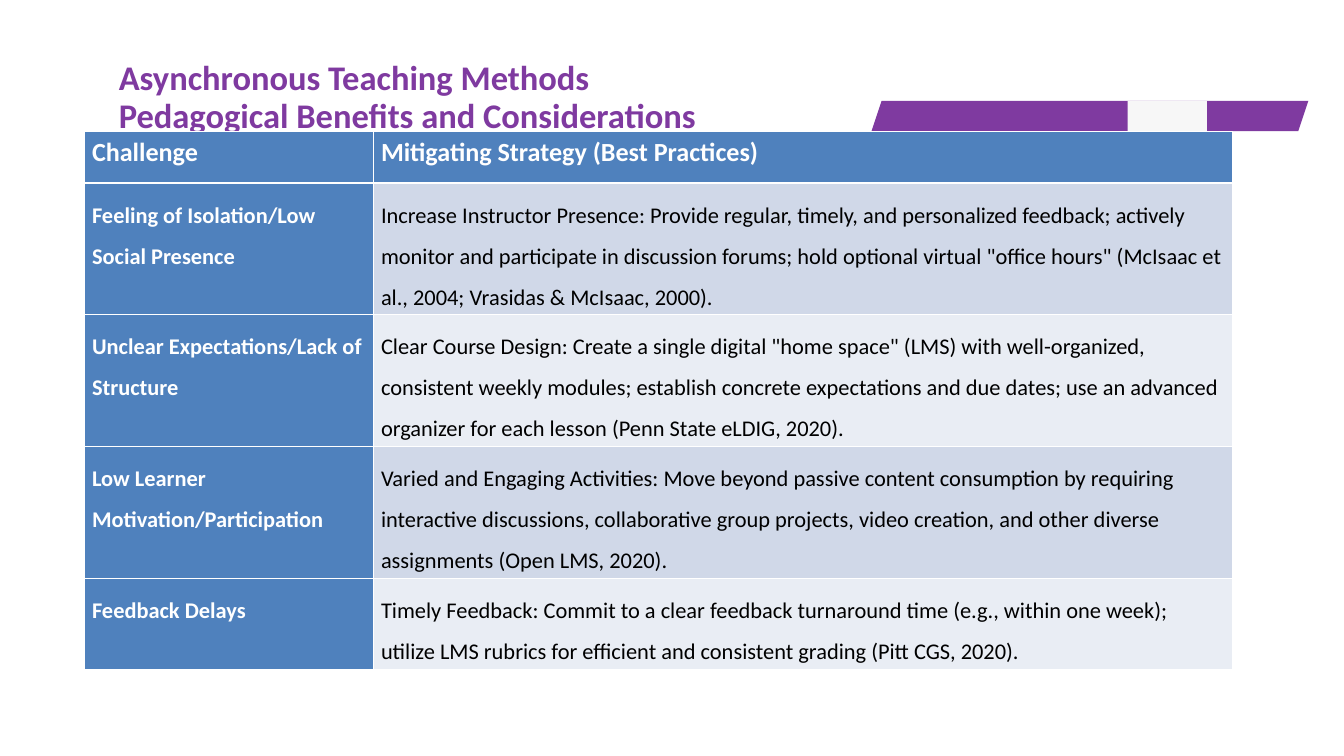
from dataclasses import dataclass

from lxml.etree import SubElement
from pptx import Presentation
from pptx.dml.color import RGBColor
from pptx.enum.shapes import MSO_SHAPE
from pptx.enum.text import MSO_ANCHOR
from pptx.oxml.ns import qn
from pptx.util import Inches, Pt


@dataclass(frozen=True)
class Theme:
    font: str = "Calibri"
    purple: str = "7F3AA0"
    pale: str = "F7F7F7"
    blue: str = "4F81BD"
    bands: tuple = ("D0D8E8", "E9EDF4")
    white: str = "FFFFFF"
    black: str = "000000"
    title_size: float = 37
    header_size: float = 28
    body_size: float = 24
    thin_border: float = 1
    thick_border: float = 3


COLUMNS, ROWS = 20, 11.25

HEADER = ("Challenge", "Mitigating Strategy (Best Practices)")
STRATEGIES = [
    ("Feeling of Isolation/Low Social Presence",
     "Increase Instructor Presence: Provide regular, timely, and personalized feedback; "
     "actively monitor and participate in discussion forums; hold optional virtual "
     "\"office hours\" (McIsaac et al., 2004; Vrasidas & McIsaac, 2000)."),
    ("Unclear Expectations/Lack of Structure",
     "Clear Course Design: Create a single digital \"home space\" (LMS) with "
     "well-organized, consistent weekly modules; establish concrete expectations and due "
     "dates; use an advanced organizer for each lesson (Penn State eLDIG, 2020)."),
    ("Low Learner Motivation/Participation",
     "Varied and Engaging Activities: Move beyond passive content consumption by "
     "requiring interactive discussions, collaborative group projects, video creation, "
     "and other diverse assignments (Open LMS, 2020)."),
    ("Feedback Delays",
     "Timely Feedback: Commit to a clear feedback turnaround time (e.g., within one "
     "week); utilize LMS rubrics for efficient and consistent grading (Pitt CGS, 2020)."),
]


class SlideBuilder:
    def __init__(self, presentation, theme):
        self.theme = theme
        self.column = presentation.slide_width / COLUMNS
        self.row = presentation.slide_height / ROWS
        self.slide = presentation.slides.add_slide(presentation.slide_layouts[6])

    def across(self, columns):
        return round(columns * self.column)

    def down(self, rows):
        return round(rows * self.row)

    def place(self, left, top, width, height):
        return self.across(left), self.down(top), self.across(width), self.down(height)

    def paint(self, shape, color):
        shape.shadow.inherit = False
        shape.fill.solid()
        shape.fill.fore_color.rgb = RGBColor.from_string(color)
        shape.line.fill.background()

    def rectangle(self, left, top, width, height, color):
        shape = self.slide.shapes.add_shape(
            MSO_SHAPE.RECTANGLE, *self.place(left, top, width, height))
        self.paint(shape, color)

    def slanted_bar(self, left, top, width, height, slant, color):
        corners = [(left + slant, top), (left + width, top),
                   (left + width - slant, top + height), (left, top + height)]
        points = [(self.across(x), self.down(y)) for x, y in corners]
        outline = self.slide.shapes.build_freeform(*points[0])
        outline.add_line_segments(points[1:], close=True)
        self.paint(outline.convert_to_shape(), color)

    def add_run(self, paragraph, text, size, color, bold):
        run = paragraph.add_run()
        run.text = text
        run.font.name = self.theme.font
        run.font.size = Pt(size)
        run.font.bold = bold
        run.font.color.rgb = RGBColor.from_string(color)

    def title(self, left, top, width, height, lines):
        box = self.slide.shapes.add_textbox(*self.place(left, top, width, height))
        frame = box.text_frame
        frame.word_wrap = True
        frame.vertical_anchor = MSO_ANCHOR.TOP
        frame.margin_top = frame.margin_bottom = Inches(0.08)
        paragraph = frame.paragraphs[0]
        paragraph.line_spacing = 0.9
        for index, line in enumerate(lines):
            if index:
                paragraph.add_line_break()
            self.add_run(paragraph, line, self.theme.title_size, self.theme.purple, True)

    def borders(self, cell, top, bottom):
        properties = cell._tc.get_or_add_tcPr()
        thin = self.theme.thin_border
        for side, width in (("L", thin), ("R", thin), ("T", top), ("B", bottom)):
            line = SubElement(properties, qn(f"a:ln{side}"), w=str(Pt(width)))
            fill = SubElement(line, qn("a:solidFill"))
            SubElement(fill, qn("a:srgbClr"), val=self.theme.white)

    def cell(self, cell, text, fill, size, color, bold, spacing, top, bottom):
        self.borders(cell, top, bottom)
        cell.fill.solid()
        cell.fill.fore_color.rgb = RGBColor.from_string(fill)
        cell.margin_left = cell.margin_right = Inches(0.12)
        cell.margin_top = cell.margin_bottom = Inches(0.08)
        paragraph = cell.text_frame.paragraphs[0]
        paragraph.line_spacing = spacing
        self.add_run(paragraph, text, size, color, bold)

    def table(self, left, top, widths, heights, records):
        theme = self.theme
        table = self.slide.shapes.add_table(
            len(heights), len(widths),
            *self.place(left, top, sum(widths), sum(heights))).table
        for column, width in zip(table.columns, widths):
            column.width = self.across(width)
        for row, height in zip(table.rows, heights):
            row.height = self.down(height)
        for r, record in enumerate(records):
            for c, text in enumerate(record):
                header, heading = r == 0, r == 0 or c == 0
                self.cell(
                    table.cell(r, c), text,
                    fill=theme.blue if heading else theme.bands[(r - 1) % 2],
                    size=theme.header_size if header else theme.body_size,
                    color=theme.white if heading else theme.black,
                    bold=heading,
                    spacing=1.0 if header else 1.5,
                    top=theme.thick_border if r == 1 else theme.thin_border,
                    bottom=theme.thick_border if header else theme.thin_border)


def main():
    presentation = Presentation()
    presentation.slide_width = Inches(20)
    presentation.slide_height = Inches(11.25)
    theme = Theme()
    builder = SlideBuilder(presentation, theme)

    # Decorative band
    builder.slanted_bar(12.97, 1.5, 6.5, 0.45, 0.15, theme.purple)
    builder.rectangle(16.78, 1.5, 1.18, 0.5, theme.pale)

    # Title
    builder.title(1.67, 0.83, 9, 1.46, ["Asynchronous Teaching Methods ",
                                        "Pedagogical Benefits and Considerations"])

    # Challenges and strategies
    builder.table(1.25, 1.96, widths=[4.3, 12.79],
                  heights=[0.76, 1.78, 1.78, 1.78, 1.27],
                  records=[HEADER, *STRATEGIES])

    presentation.save("out.pptx")


if __name__ == "__main__":
    main()
